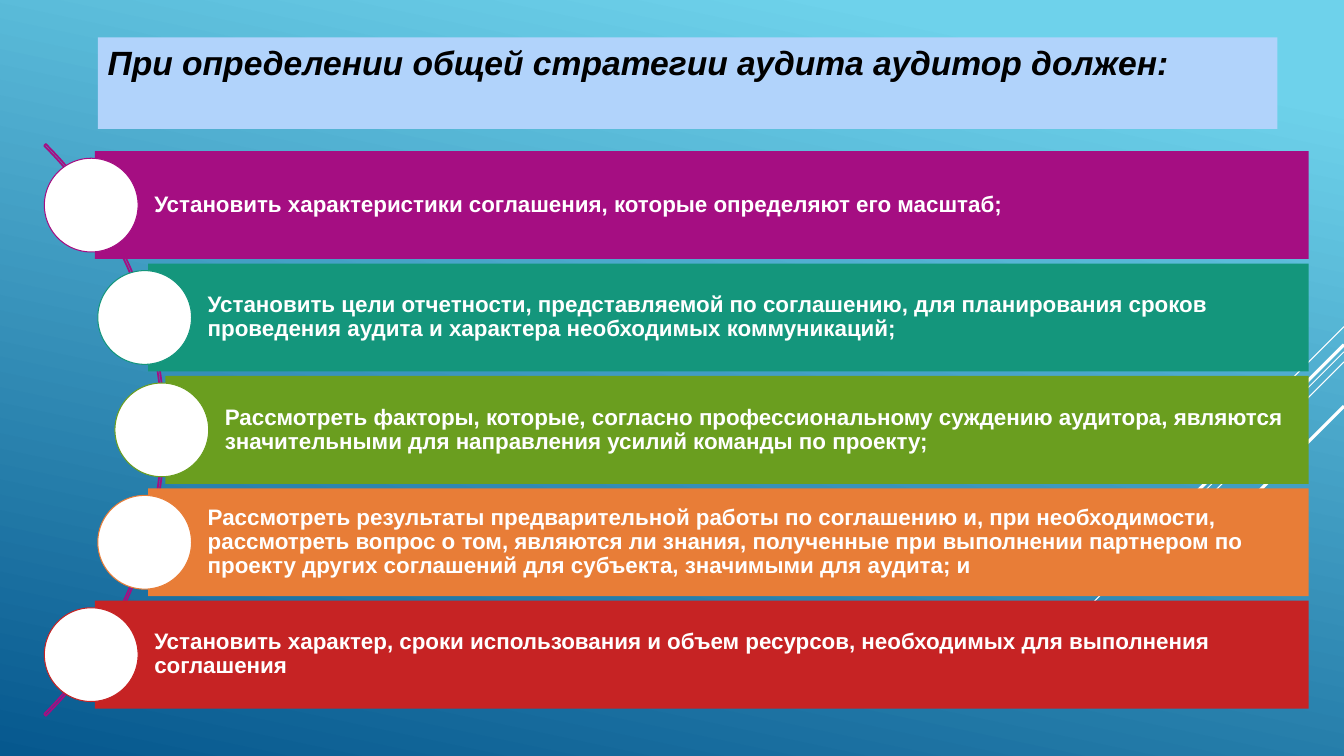
from pptx import Presentation
from pptx.dml.color import RGBColor
from pptx.enum.shapes import MSO_CONNECTOR, MSO_SHAPE
from pptx.enum.text import MSO_ANCHOR, PP_ALIGN
from pptx.util import Inches, Pt
from lxml import etree

WIDTH, HEIGHT = 13.33, 7.5
DRAWING = "http://schemas.openxmlformats.org/drawingml/2006/main"

STEPS = [
    # bar left, colour, text
    (0.94, "A50E82", "Установить характеристики соглашения, которые определяют его масштаб;"),
    (1.47, "14967C", "Установить цели отчетности, представляемой по соглашению, для планирования "
                     "сроков проведения аудита и характера необходимых коммуникаций;"),
    (1.64, "6A9E1F", "Рассмотреть факторы, которые, согласно профессиональному суждению аудитора, "
                     "являются значительными для направления усилий команды по проекту;"),
    (1.47, "E87D37", "Рассмотреть результаты предварительной работы по соглашению и, при "
                     "необходимости, рассмотреть вопрос о том, являются ли знания, полученные при "
                     "выполнении партнером по проекту других соглашений для субъекта, значимыми "
                     "для аудита; и"),
    (0.94, "C62324", "Установить характер, сроки использования и объем ресурсов, необходимых для "
                     "выполнения соглашения"),
]


def color(value):
    return RGBColor.from_string(value)


def add_box(slide, kind, left, top, width, height, fill=None, line=None, weight=0.75):
    shape = slide.shapes.add_shape(kind, Inches(left), Inches(top), Inches(width), Inches(height))
    shape.shadow.inherit = False
    if fill:
        shape.fill.solid()
        shape.fill.fore_color.rgb = color(fill)
    else:
        shape.fill.background()
    if line:
        shape.line.color.rgb = color(line)
        shape.line.width = Pt(weight)
    else:
        shape.line.fill.background()
    return shape


def write(shape, text, size, text_color, anchor, italic=None):
    frame = shape.text_frame
    frame.text = text
    frame.word_wrap = True
    frame.vertical_anchor = anchor
    paragraph = frame.paragraphs[0]
    paragraph.alignment = PP_ALIGN.LEFT
    font = paragraph.runs[0].font
    font.name, font.size, font.bold, font.italic = "Arial", Pt(size), True, italic
    font.color.rgb = color(text_color)
    return frame


def draw_background(slide):
    fill = slide.background.fill
    fill.gradient()
    fill.gradient_angle = 258
    for stop, (position, value) in zip(fill.gradient_stops, [(0.1, "6ED2EB"), (1, "06588E")]):
        stop.position = position
        stop.color.rgb = color(value)

    # Diagonal rays: start height on the right edge, run, weight
    for top, run, weight in [(3.24, 1, 0.75), (3.49, 3.26, 0.75), (3.59, 2.07, 0.75),
                             (3.42, 1.91, 2.25), (4.03, 1.39, 2.25)]:
        ray = slide.shapes.add_connector(MSO_CONNECTOR.STRAIGHT, Inches(WIDTH), Inches(top),
                                         Inches(WIDTH - run), Inches(top + run))
        ray.line.color.rgb = color("FFFFFF")
        ray.line.width = Pt(weight)
        etree.SubElement(ray._element.spPr, f"{{{DRAWING}}}effectLst")


def draw_steps(slide, top, right, bottom):
    # Arc behind the circles, centred on the list
    diameter = 8.02
    arc = add_box(slide, MSO_SHAPE.BLOCK_ARC, -6.39, (top + bottom - diameter) / 2,
                  diameter, diameter, line="A50E82", weight=1.25)
    for index, value in enumerate((189, 27, 0.003)):
        arc.adjustments[index] = value

    # Bars with a circle on the left end of each
    bar_height, circle_size = 1.07, 0.93
    pitch = (bottom - top - bar_height) / (len(STEPS) - 1)
    for index, (left, value, text) in enumerate(STEPS):
        bar_top = top + index * pitch
        bar = add_box(slide, MSO_SHAPE.RECTANGLE, left, bar_top, right - left, bar_height, value)
        frame = write(bar, text, 16, "FFFFFF", MSO_ANCHOR.MIDDLE)
        frame.margin_left = Inches(0.59)
        frame.margin_top = frame.margin_right = frame.margin_bottom = Inches(0.04)
        frame.paragraphs[0].line_spacing = 0.9
        add_box(slide, MSO_SHAPE.OVAL, left - 0.5, bar_top + (bar_height - circle_size) / 2,
                circle_size, circle_size, "FFFFFF", value)


def draw_title(slide, left, top, width, height):
    title = add_box(slide, MSO_SHAPE.RECTANGLE, left, top, width, height, "B1D3FB")
    write(title, "При определении общей стратегии аудита аудитор должен:", 24, "000000",
          MSO_ANCHOR.TOP, italic=True)


def main():
    presentation = Presentation()
    presentation.slide_width, presentation.slide_height = Inches(WIDTH), Inches(HEIGHT)
    slide = presentation.slides.add_slide(presentation.slide_layouts[6])
    draw_background(slide)
    draw_steps(slide, 1.5, 12.98, 7.03)
    draw_title(slide, 0.97, 0.37, 11.7, 0.91)
    presentation.save("out.pptx")


if __name__ == "__main__":
    main()
